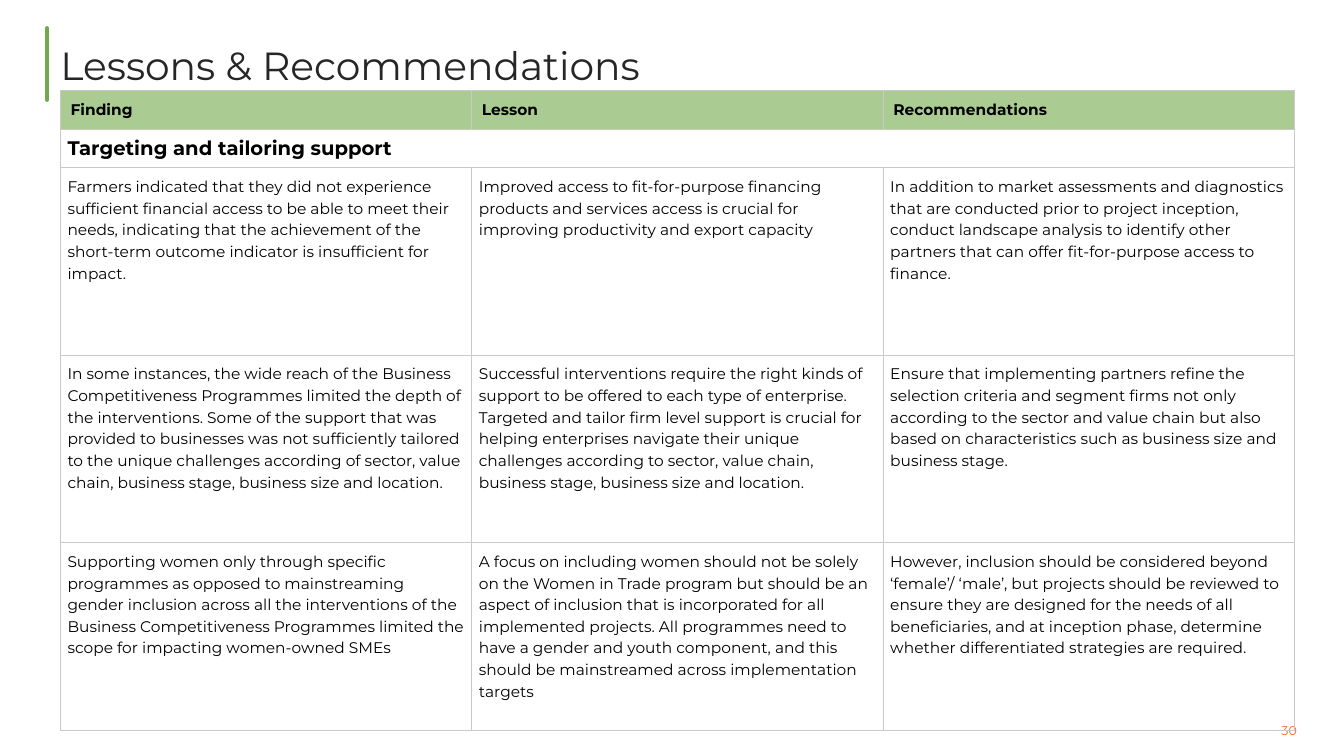
from lxml.etree import SubElement
from pptx import Presentation
from pptx.dml.color import RGBColor
from pptx.enum.shapes import MSO_CONNECTOR
from pptx.enum.text import MSO_ANCHOR as Anchor, PP_ALIGN as Align
from pptx.oxml.ns import qn
from pptx.util import Inches, Pt

COLORS = {
    "accent": "72A84E",
    "header": "AACC92",
    "border": "CBC8C7",
    "title": "262626",
    "text": "000000",
    "number": "F2672B",
}

HEADERS = ["Finding", "Lesson", "Recommendations"]
SECTION = "Targeting and tailoring support"
LESSONS = [
    [
        "Farmers indicated that they did not experience sufficient financial access to be able "
        "to meet their needs, indicating that the achievement of the short-term outcome "
        "indicator is insufficient for impact.",
        "Improved access to fit-for-purpose financing products and services access is crucial "
        "for improving productivity and export capacity",
        "In addition to market assessments and diagnostics that are conducted prior to project "
        "inception, conduct landscape analysis to identify other partners that can offer "
        "fit-for-purpose access to finance.",
    ],
    [
        "In some instances, the wide reach of the Business Competitiveness Programmes limited "
        "the depth of the interventions. Some of the support that was provided to businesses "
        "was not sufficiently tailored to the unique challenges according of sector, value "
        "chain, business stage, business size and location.",
        "Successful interventions require the right kinds of support to be offered to each type "
        "of enterprise. Targeted and tailor firm level support is crucial for helping "
        "enterprises navigate their unique challenges according to sector, value chain, "
        "business stage, business size and location.",
        "Ensure that implementing partners refine the selection criteria and segment firms not "
        "only according to the sector and value chain but also based on characteristics such "
        "as business size and business stage.",
    ],
    [
        "Supporting women only through specific programmes as opposed to mainstreaming gender "
        "inclusion across all the interventions of the Business Competitiveness Programmes "
        "limited the scope for impacting women-owned SMEs",
        "A focus on including women should not be solely on the Women in Trade program but "
        "should be an aspect of inclusion that is incorporated for all implemented projects. "
        "All programmes need to have a gender and youth component, and this should be "
        "mainstreamed across implementation targets",
        "However, inclusion should be considered beyond ‘female’/ ‘male’, but projects should "
        "be reviewed to ensure they are designed for the needs of all beneficiaries, and at "
        "inception phase, determine whether differentiated strategies are required.",
    ],
]


class SlideBuilder:
    font = "Montserrat"

    def __init__(self, prs):
        self.slide = prs.slides.add_slide(prs.slide_layouts[5])

    def add_text(self, tf, text, size, color, bold=False, spacing=1.0):
        p = tf.paragraphs[0]
        p.alignment = Align.LEFT
        p.line_spacing = spacing
        r = p.add_run()
        r.text = text
        r.font.name = self.font
        r.font.size = Pt(size)
        r.font.bold = bold
        r.font.color.rgb = RGBColor.from_string(COLORS[color])

    def place(self, sp, box, anchor, margins):
        sp.left, sp.top, sp.width, sp.height = map(Inches, box)
        tf = sp.text_frame
        tf.word_wrap = True
        tf.vertical_anchor = anchor
        tf.margin_left, tf.margin_top, tf.margin_right, tf.margin_bottom = map(Inches, margins)
        return tf

    def title(self, text, box):
        tf = self.place(self.slide.shapes.title, box, Anchor.MIDDLE, (0.1, 0.05, 0.1, 0.05))
        self.add_text(tf, text, 28, "title")

    def text(self, text, box, size, color):
        sp = self.slide.shapes.add_textbox(*map(Inches, box))
        tf = self.place(sp, box, Anchor.BOTTOM, (0, 0, 0, 0))
        self.add_text(tf, text, size, color)

    def line(self, x1, y1, x2, y2, color, width):
        ends = map(Inches, (x1, y1, x2, y2))
        line = self.slide.shapes.add_connector(MSO_CONNECTOR.STRAIGHT, *ends)
        line.line.color.rgb = RGBColor.from_string(COLORS[color])
        line.line.width = Pt(width)
        line._element.spPr.find(qn("a:ln")).set("cap", "rnd")
        SubElement(line._element.spPr, qn("a:effectLst"))

    def table(self, left, top, col_widths, row_heights):
        frame = self.slide.shapes.add_table(
            len(row_heights), len(col_widths), Inches(left), Inches(top),
            Inches(sum(col_widths)), Inches(sum(row_heights)))
        table = frame.table
        table.first_row = table.horz_banding = False
        for col, width in zip(table.columns, col_widths):
            col.width = Inches(width)
        for row, height in zip(table.rows, row_heights):
            row.height = Inches(height)
        for cell in table.iter_cells():
            self.borders(cell)
            cell.fill.background()
        return table

    def borders(self, cell):
        tc_pr = cell._tc.get_or_add_tcPr()
        for side in ("lnL", "lnR", "lnT", "lnB"):
            ln = SubElement(tc_pr, qn(f"a:{side}"), w=str(Pt(0.75)))
            fill = SubElement(ln, qn("a:solidFill"))
            SubElement(fill, qn("a:srgbClr"), val=COLORS["border"])

    def cell(self, cell, text, size=11, bold=False, margin=0.07, spacing=1.0, fill=None):
        cell.margin_left = cell.margin_right = Inches(margin)
        cell.margin_top = cell.margin_bottom = Inches(margin)
        cell.vertical_anchor = Anchor.TOP
        if fill:
            cell.fill.solid()
            cell.fill.fore_color.rgb = RGBColor.from_string(COLORS[fill])
        self.add_text(cell.text_frame, text, size, "text", bold, spacing)


def main():
    prs = Presentation()
    prs.slide_width, prs.slide_height = Inches(13.33), Inches(7.5)
    s = SlideBuilder(prs)

    # Title with accent bar, and page number
    s.line(0.47, 0.28, 0.47, 0.99, "accent", 3)
    s.title("Lessons & Recommendations", (0.5, 0.29, 12.36, 0.7))
    s.text("30", (12.71, 7.17, 0.72, 0.15), 9, "number")

    # Table: header row, section row, one row per lesson
    table = s.table(0.6, 0.9, [4.08] * 3, [0.37, 0.38] + [1.86] * len(LESSONS))
    for col, header in enumerate(HEADERS):
        s.cell(table.cell(0, col), header, bold=True, margin=0.1, fill="header")
    table.cell(1, 0).merge(table.cell(1, 2))
    s.cell(table.cell(1, 0), SECTION, size=14, bold=True)
    for row, lesson in enumerate(LESSONS, start=2):
        for col, text in enumerate(lesson):
            s.cell(table.cell(row, col), text, spacing=1.15)

    prs.save("out.pptx")


if __name__ == "__main__":
    main()
